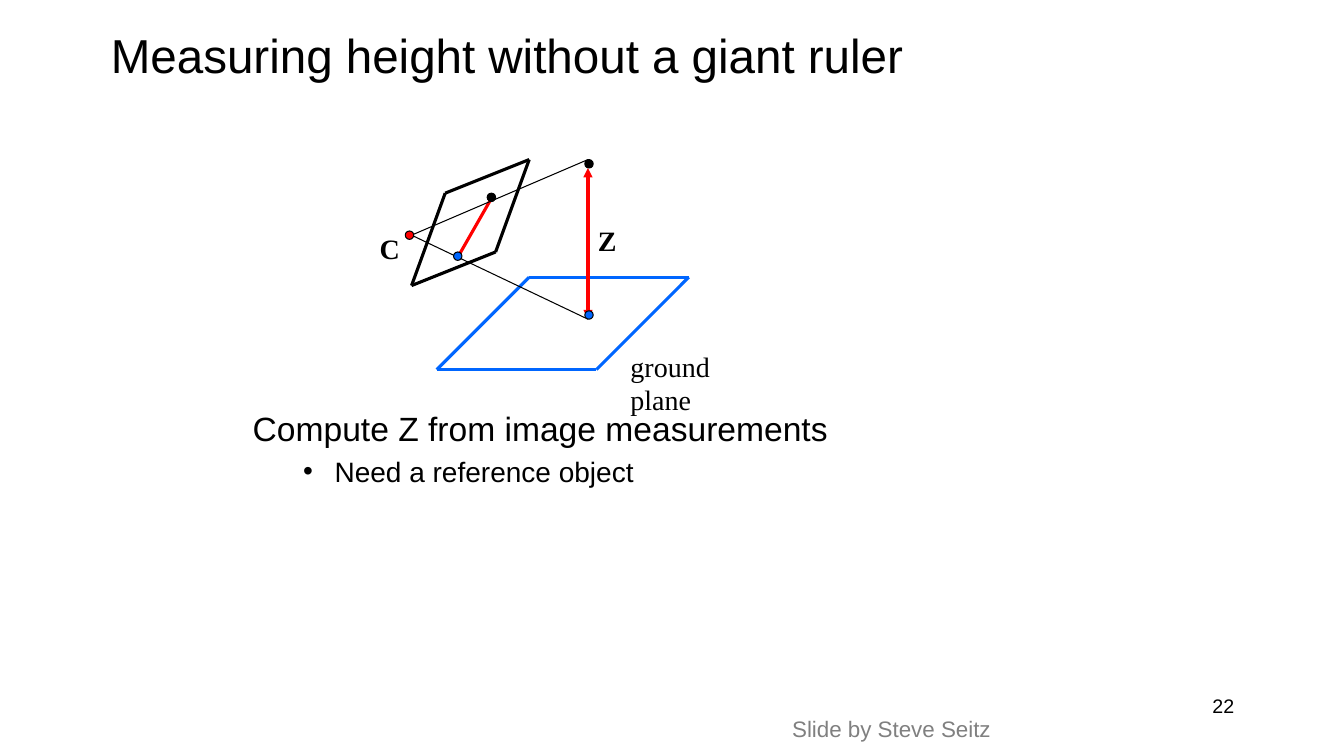
from dataclasses import dataclass
from itertools import pairwise

from lxml import etree
from pptx import Presentation
from pptx.dml.color import RGBColor
from pptx.enum.shapes import MSO_CONNECTOR, MSO_SHAPE
from pptx.enum.text import MSO_ANCHOR, MSO_AUTO_SIZE, PP_ALIGN
from pptx.oxml.ns import qn
from pptx.util import Pt

STRAIGHT = MSO_CONNECTOR.STRAIGHT
OVAL = MSO_SHAPE.OVAL
TOP, MIDDLE = MSO_ANCHOR.TOP, MSO_ANCHOR.MIDDLE
LEFT, RIGHT = PP_ALIGN.LEFT, PP_ALIGN.RIGHT
NO_AUTOFIT = MSO_AUTO_SIZE.NONE
PX = 9525  # EMU in one px, 96 px to the inch


@dataclass(frozen=True)
class Theme:
    black: RGBColor = RGBColor(0, 0, 0)
    red: RGBColor = RGBColor(0xFF, 0, 0)
    blue: RGBColor = RGBColor(0, 0x66, 0xFF)
    gray: RGBColor = RGBColor(0x80, 0x80, 0x80)
    sans: str = "Arial"
    serif: str = "Times New Roman"
    title_size: int = 34
    body_size: int = 24
    label_size: int = 20
    credit_size: int = 16
    number_size: int = 14
    thin: float = 0.75
    thick: float = 2.25


class SlideBuilder:
    def __init__(self, slide, theme):
        self.slide = slide
        self.theme = theme

    def style(self, paragraph, size, name, color=None, bold=False):
        font = paragraph.font
        font.size, font.name, font.bold = Pt(size), name, bold
        font.color.rgb = color or self.theme.black

    def place(self, shape, left, top, width, height):
        shape.left, shape.top = left * PX, top * PX
        shape.width, shape.height = width * PX, height * PX

    def title(self, text, box):
        shape = self.slide.shapes.title
        self.place(shape, *box)
        frame = shape.text_frame
        frame.text = text
        frame.vertical_anchor, frame.auto_size = MIDDLE, NO_AUTOFIT
        paragraph = frame.paragraphs[0]
        paragraph.alignment = LEFT
        self.style(paragraph, self.theme.title_size, self.theme.sans)

    def body(self, items, box):
        """Each item is text, level, size, margin, indent, bullet, space before."""
        shape = self.slide.placeholders[1]
        self.place(shape, *box)
        frame = shape.text_frame
        frame.text = "\n".join(item[0] for item in items)
        frame.vertical_anchor, frame.auto_size = TOP, NO_AUTOFIT
        for paragraph, item in zip(frame.paragraphs, items):
            _, level, size, margin, indent, bullet, space = item
            paragraph.level = level
            paragraph.space_before = Pt(space)
            properties = paragraph._p.get_or_add_pPr()
            properties.set("marL", str(margin * PX))
            properties.set("indent", str(indent * PX))
            if bullet:
                etree.SubElement(properties, qn("a:buChar")).set("char", bullet)
            else:
                etree.SubElement(properties, qn("a:buNone"))
            self.style(paragraph, size, self.theme.sans)

    def text(self, text, box, size, name, color=None, bold=False, align=LEFT):
        shape = self.slide.shapes.add_textbox(*(length * PX for length in box))
        frame = shape.text_frame
        frame.text = text
        frame.word_wrap = align == RIGHT
        paragraph = frame.paragraphs[0]
        paragraph.alignment = align
        self.style(paragraph, size, name, color, bold)

    def line(self, start, end, color, width, arrows=False):
        ends = (length * PX for length in (*start, *end))
        connector = self.slide.shapes.add_connector(STRAIGHT, *ends)
        connector.line.color.rgb = color
        connector.line.width = Pt(width)
        if arrows:
            outline = connector.line._get_or_add_ln()
            for tag in ("a:headEnd", "a:tailEnd"):
                etree.SubElement(outline, qn(tag)).set("type", "triangle")
        etree.SubElement(connector._element.spPr, qn("a:effectLst"))

    def plane(self, corners, color):
        for start, end in pairwise([*corners, corners[0]]):
            self.line(start, end, color, self.theme.thick)

    def dot(self, center, color, diameter=8):
        left, top = (length - diameter // 2 for length in center)
        box = (left * PX, top * PX, diameter * PX, diameter * PX)
        shape = self.slide.shapes.add_shape(OVAL, *box)
        shape.shadow.inherit = False
        shape.fill.solid()
        shape.fill.fore_color.rgb = color
        shape.line.color.rgb = self.theme.black
        shape.line.width = Pt(self.theme.thin)


def main():
    presentation = Presentation()
    presentation.slide_width, presentation.slide_height = 1280 * PX, 720 * PX
    slide = presentation.slides.add_slide(presentation.slide_layouts[1])
    theme = Theme()
    builder = SlideBuilder(slide, theme)

    # Title and list
    builder.title("Measuring height without a giant ruler", (96, 8, 1088, 88))
    builder.body(
        [
            ("Compute Z from image measurements", 0, theme.body_size, 36, -36, None, 0),
            ("Need a reference object", 1, theme.label_size, 78, -30, "•", 4),
        ],
        (231, 384, 905, 296),
    )

    # Ground plane and image plane
    builder.plane([(416, 352), (504, 264), (656, 264), (568, 352)], theme.blue)
    builder.plane([(424, 184), (504, 152), (472, 240), (392, 272)], theme.black)

    # Measured height, its projection and the two viewing rays
    builder.line((436, 245), (468, 189), theme.red, theme.thick)
    builder.line((560, 304), (560, 160), theme.red, theme.thick, arrows=True)
    for target in ((560, 152), (560, 304)):
        builder.line((392, 224), target, theme.black, theme.thin)

    # Camera centre, then the top and bottom points with their images
    builder.dot((390, 224), theme.red)
    for center in ((561, 156), (468, 188)):
        builder.dot(center, theme.black)
    for center in ((561, 300), (436, 244)):
        builder.dot(center, theme.blue)

    # Diagram labels
    for text, box, bold in (
        ("C", (352, 216, 38, 41), True),
        ("Z", (560, 208, 37, 41), True),
        ("ground plane", (591, 328, 159, 41), False),
    ):
        builder.text(text, box, theme.label_size, theme.serif, bold=bold)

    # Credit and slide number
    builder.text("Slide by Steve Seitz", (745, 676, 211, 35),
                 theme.credit_size, theme.sans, theme.gray)
    builder.text("22", (918, 656, 267, 48),
                 theme.number_size, theme.sans, align=RIGHT)

    presentation.save("out.pptx")


if __name__ == "__main__":
    main()
